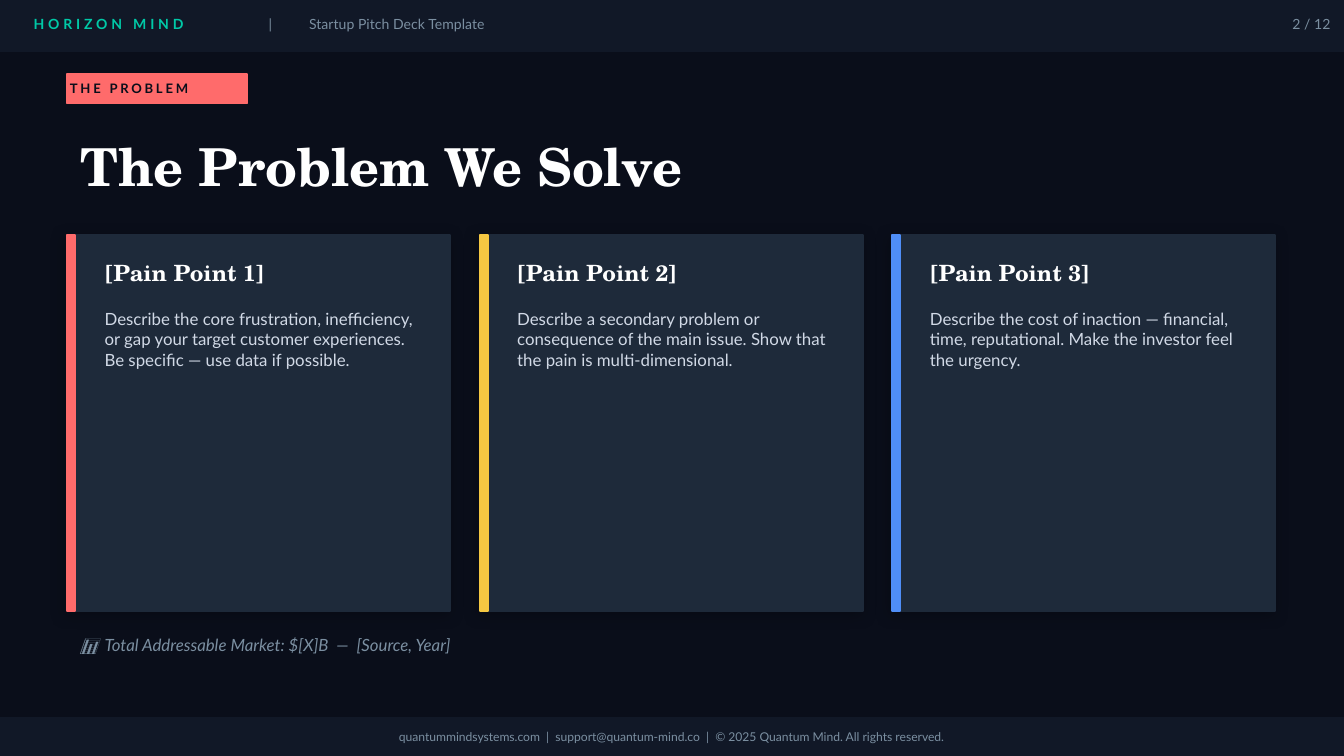
from dataclasses import dataclass

from lxml.etree import SubElement
from pptx import Presentation
from pptx.dml.color import RGBColor
from pptx.enum.shapes import MSO_SHAPE
from pptx.enum.text import MSO_ANCHOR, PP_ALIGN
from pptx.oxml.ns import qn
from pptx.util import Inches, Pt


@dataclass(frozen=True)
class Theme:
    background: str = "0A0E1A"
    band: str = "111827"
    card: str = "1E2A3A"
    shadow: str = "000000"
    brand: str = "00C9A7"
    coral: str = "FF6B6B"
    yellow: str = "F5C842"
    blue: str = "4F8EF7"
    white: str = "FFFFFF"
    body: str = "D1D9E6"
    muted: str = "7B8FA1"
    sans: str = "Lato"
    serif: str = "TeX Gyre Schola"
    title_size: float = 28
    heading_size: float = 12
    body_size: float = 9
    header_size: float = 7.5
    tag_size: float = 7
    footer_size: float = 6.5


THEME = Theme()
WIDTH = 10
HEIGHT = WIDTH * 9 / 16
MARGIN = 0.5
CARD_WIDTH, CARD_GAP = 2.85, 0.22
PAIN_POINTS = [
    ("[Pain Point 1]", THEME.coral,
     "Describe the core frustration, inefficiency, or gap your target customer "
     "experiences. Be specific — use data if possible."),
    ("[Pain Point 2]", THEME.yellow,
     "Describe a secondary problem or consequence of the main issue. "
     "Show that the pain is multi-dimensional."),
    ("[Pain Point 3]", THEME.blue,
     "Describe the cost of inaction — financial, time, reputational. "
     "Make the investor feel the urgency."),
]


def add_block(slide, left, top, width, height, color):
    block = slide.shapes.add_shape(
        MSO_SHAPE.RECTANGLE, Inches(left), Inches(top), Inches(width), Inches(height))
    block.shadow.inherit = False
    block.fill.solid()
    block.fill.fore_color.rgb = RGBColor.from_string(color)
    block.line.color.rgb = RGBColor.from_string(color)
    block.line.width = Pt(1)
    return block


def add_soft_shadow(block):
    effects = block._element.spPr.find(qn("a:effectLst"))
    shadow = SubElement(effects, qn("a:outerShdw"), blurRad=str(Pt(8)), dist=str(Pt(2)),
                        dir=str(135 * 60000), algn="bl", rotWithShape="0")
    color = SubElement(shadow, qn("a:srgbClr"), val=THEME.shadow)
    SubElement(color, qn("a:alpha"), val="25000")


def add_text(slide, left, top, width, height, text, size, color, font=THEME.sans,
             bold=False, italic=False, align=PP_ALIGN.LEFT,
             anchor=MSO_ANCHOR.MIDDLE, inset=True, spacing=0):
    """Add one paragraph; spacing is the letter spacing in points."""
    box = slide.shapes.add_textbox(
        Inches(left), Inches(top), Inches(width), Inches(height))
    frame = box.text_frame
    frame.word_wrap = True
    frame.vertical_anchor = anchor
    if not inset:
        frame.margin_left = frame.margin_right = 0
        frame.margin_top = frame.margin_bottom = 0
    frame.text = text
    paragraph = frame.paragraphs[0]
    paragraph.alignment = align
    run = paragraph.runs[0]
    run.font.name = font
    run.font.size = Pt(size)
    run.font.bold = bold
    run.font.italic = italic
    run.font.color.rgb = RGBColor.from_string(color)
    if spacing:
        run._r.get_or_add_rPr().set("spc", str(int(spacing * 100)))


def add_header(slide, left, top, width, height):
    add_block(slide, left, top, width, height, THEME.band)
    row_top, row_height = top + 0.04, 0.28
    add_text(slide, left + 0.25, row_top, 2.5, row_height, "HORIZON MIND",
             THEME.header_size, THEME.brand, bold=True, inset=False, spacing=2)
    for offset, label_width, label in [(2, 0.3, "|"),
                                       (2.3, 4, "Startup Pitch Deck Template")]:
        add_text(slide, left + offset, row_top, label_width, row_height, label,
                 THEME.header_size, THEME.muted, inset=False)
    add_text(slide, left + width - 0.8, top + 0.05, 0.7, 0.26, "2 / 12",
             THEME.header_size, THEME.muted, align=PP_ALIGN.RIGHT, inset=False)


def add_footer(slide, left, top, width, height):
    add_block(slide, left, top, width, height, THEME.band)
    add_text(slide, left, top + 0.04, width, height - 0.08,
             "quantummindsystems.com  |  support@quantum-mind.co  |  "
             "© 2025 Quantum Mind. All rights reserved.",
             THEME.footer_size, THEME.muted, align=PP_ALIGN.CENTER, inset=False)


def add_section_tag(slide, left, top, width, height):
    add_block(slide, left, top, width, height, THEME.coral)
    add_text(slide, left + 0.02, top, width - 0.05, height, "THE PROBLEM",
             THEME.tag_size, THEME.background, bold=True, inset=False, spacing=1.5)


def add_pain_card(slide, left, top, width, height, heading, accent, description):
    card = add_block(slide, left, top, width, height, THEME.card)
    add_soft_shadow(card)
    add_block(slide, left, top, 0.06, height, accent)
    text_left, text_width = left + 0.18, width - 0.3
    add_text(slide, text_left, top + 0.1, text_width, 0.35, heading,
             THEME.heading_size, THEME.white, font=THEME.serif, bold=True)
    add_text(slide, text_left, top + 0.5, text_width, height - 0.9, description,
             THEME.body_size, THEME.body, anchor=MSO_ANCHOR.TOP)


def add_problem_slide(deck):
    slide = deck.slides.add_slide(deck.slide_layouts[6])
    slide.background.fill.solid()
    slide.background.fill.fore_color.rgb = RGBColor.from_string(THEME.background)

    add_header(slide, 0, 0, WIDTH, 0.38)
    add_footer(slide, 0, HEIGHT - 0.28, WIDTH, 0.28)
    add_section_tag(slide, MARGIN, 0.55, 1.34, 0.22)
    content_width = WIDTH - 2 * MARGIN
    add_text(slide, MARGIN, 0.88, content_width, 0.7, "The Problem We Solve",
             THEME.title_size, THEME.white, font=THEME.serif, bold=True)
    for index, pain_point in enumerate(PAIN_POINTS):
        card_left = MARGIN + index * (CARD_WIDTH + CARD_GAP)
        add_pain_card(slide, card_left, 1.75, CARD_WIDTH, 2.8, *pain_point)
    add_text(slide, MARGIN, 4.65, content_width, 0.3,
             "📊  Total Addressable Market: $[X]B  —  [Source, Year]",
             THEME.body_size, THEME.muted, italic=True)


def main():
    deck = Presentation()
    deck.slide_width, deck.slide_height = Inches(WIDTH), Inches(HEIGHT)
    add_problem_slide(deck)
    deck.save("out.pptx")


if __name__ == "__main__":
    main()
